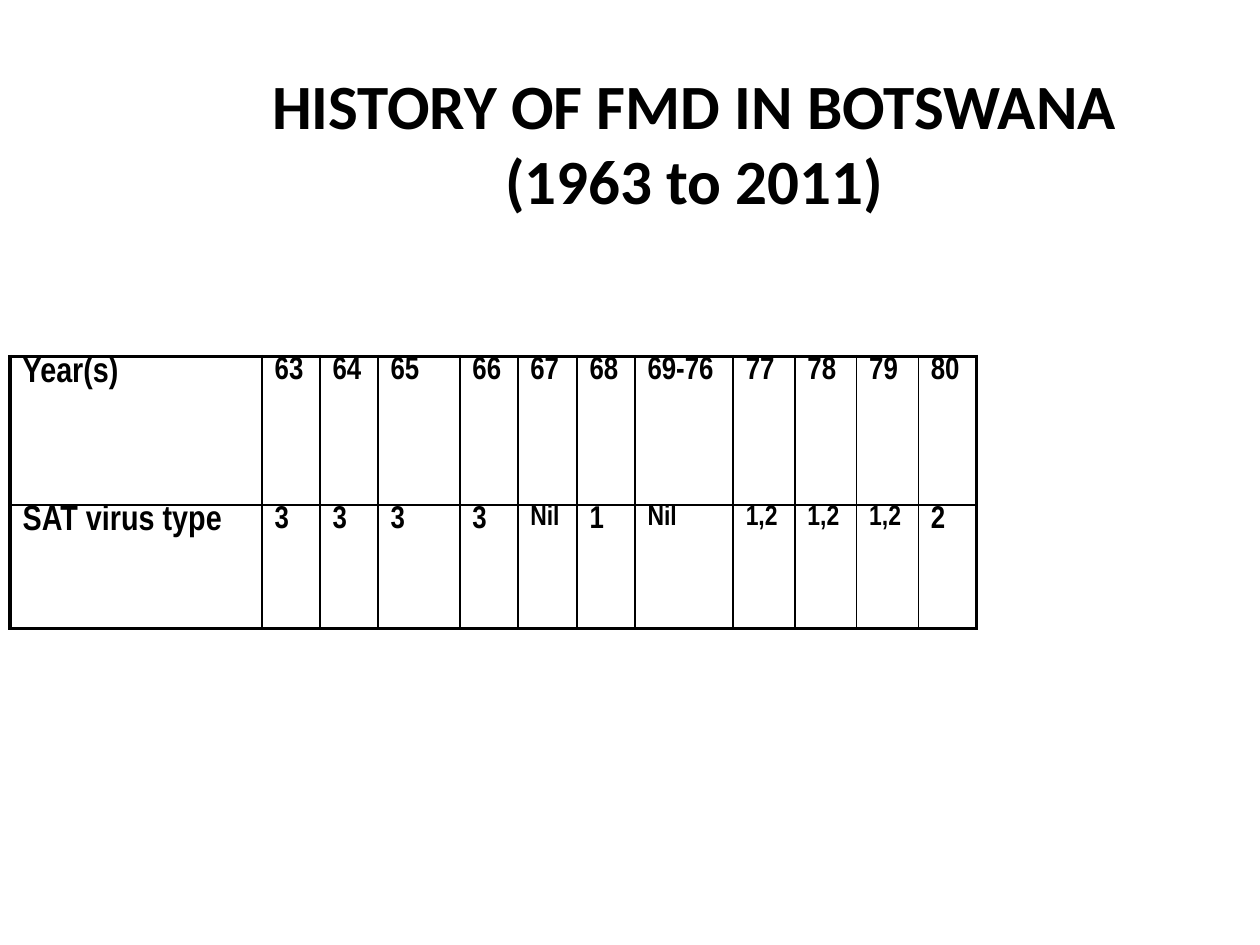
from lxml import etree
from pptx import Presentation
from pptx.dml.color import RGBColor
from pptx.enum import text
from pptx.oxml import ns
from pptx.util import Inches, Pt

BLACK = RGBColor(0, 0, 0)
THIN, THICK = 1, 2.25

# Content
TITLE = "HISTORY OF FMD IN BOTSWANA\v(1963 to 2011)"
ROWS = [
    ["Year(s)", "63", "64", "65", "66", "67", "68", "69-76", "77", "78", "79", "80"],
    ["SAT virus type", "3", "3", "3", "3", "Nil", "1", "Nil", "1,2", "1,2", "1,2", "2"],
]
COL_WIDTHS = [2, 0.46, 0.46, 0.65, 0.46, 0.47, 0.46, 0.78, 0.49, 0.49, 0.49, 0.46]
ROW_HEIGHTS = [1.18, 0.98]


def format_run(r, font, size):
    r.font.name = font
    r.font.size = Pt(size)
    r.font.bold = True
    r.font.color.rgb = BLACK


def add_border(cell, side, width):
    ln = etree.SubElement(cell._tc.get_or_add_tcPr(), ns.qn("a:ln" + side), w=str(Pt(width)))
    fill = etree.SubElement(ln, ns.qn("a:solidFill"))
    etree.SubElement(fill, ns.qn("a:srgbClr"), val=str(BLACK))


def text_size(value, row, col):
    if col == 0:
        return 20
    return 16 if row == 1 and len(value) > 1 else 18


prs = Presentation()
prs.slide_width, prs.slide_height = Inches(10), Inches(7.5)
s = prs.slides.add_slide(prs.slide_layouts[5])

# Title
title = s.shapes.title
title.left, title.top = Inches(1.26), Inches(0.5)
title.width, title.height = Inches(8.5), Inches(1.25)
tf = title.text_frame
tf.text = TITLE
tf.vertical_anchor = text.MSO_ANCHOR.MIDDLE
p = tf.paragraphs[0]
p.alignment = text.PP_ALIGN.CENTER
for r in p.runs:
    format_run(r, "Calibri", 36)

# Table of outbreaks
last_row, last_col = len(ROWS) - 1, len(COL_WIDTHS) - 1
table = s.shapes.add_table(
    len(ROWS), len(COL_WIDTHS), Inches(0.08), Inches(2.83),
    Inches(sum(COL_WIDTHS)), Inches(sum(ROW_HEIGHTS))).table
table.first_row = table.horz_banding = False
for column, width in zip(table.columns, COL_WIDTHS):
    column.width = Inches(width)
for table_row, height in zip(table.rows, ROW_HEIGHTS):
    table_row.height = Inches(height)

for row, values in enumerate(ROWS):
    for col, value in enumerate(values):
        cell = table.cell(row, col)
        cell.text_frame.text = value
        cell.margin_top = 0
        format_run(cell.text_frame.paragraphs[0].runs[0], "Arial Narrow",
                   text_size(value, row, col))
        # Thick frame outside, thin rules inside
        outer = {"L": col == 0, "R": col == last_col, "T": row == 0, "B": row == last_row}
        for side, is_outer in outer.items():
            add_border(cell, side, THICK if is_outer else THIN)
        cell.fill.background()

prs.save("out.pptx")
